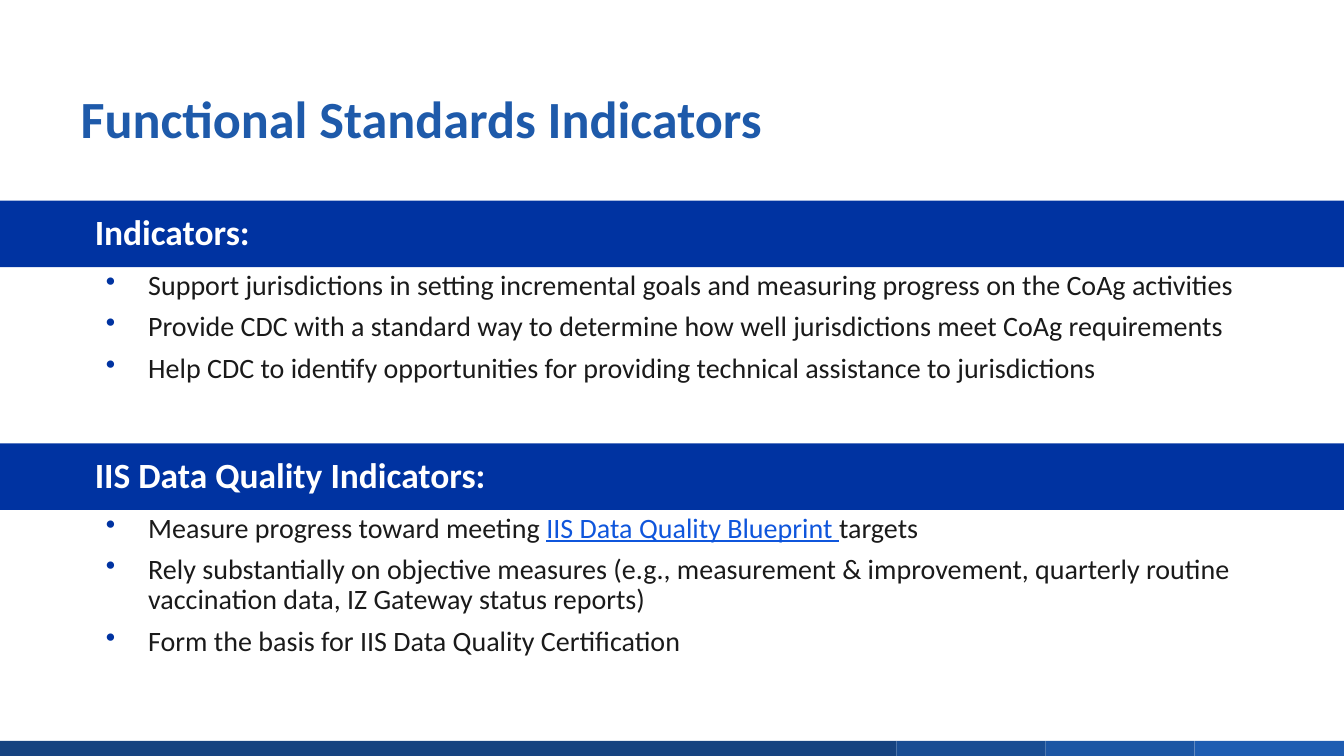
from dataclasses import dataclass

from lxml.etree import SubElement
from pptx import Presentation
from pptx.dml.color import RGBColor
from pptx.enum.shapes import MSO_SHAPE as SHAPE
from pptx.enum.text import MSO_ANCHOR as ANCHOR
from pptx.oxml.ns import qn
from pptx.util import Inches, Pt


@dataclass(frozen=True)
class Theme:
    font: str = "Calibri"
    title: str = "1E5AAA"
    band: str = "0033A1"
    band_text: str = "FFFFFF"
    body: str = "1A1A1A"
    link: str = "0F56DC"
    footer: tuple = ("164380", "194D93", "1C56A4", "1E5DB2")
    title_size: float = 37.3
    band_size: float = 25.3
    body_size: float = 20


THEME = Theme()
WIDTH, HEIGHT = 13.33, 7.5
BAND_HEIGHT = 0.66
LINK = "IIS Data Quality Blueprint "

# Band top, list height, heading, bullets (each a list of runs)
SECTIONS = [
    (1.99, 1.15, "Indicators:", [
        ["Support jurisdictions in setting incremental goals and measuring "
         "progress on the CoAg activities"],
        ["Provide CDC with a standard way to determine how well jurisdictions "
         "meet CoAg requirements"],
        ["Help CDC to identify opportunities for providing technical "
         "assistance to jurisdictions"],
    ]),
    (4.4, 1.43, "IIS Data Quality Indicators:", [
        ["Measure progress toward meeting ", LINK, "targets"],
        ["Rely substantially on objective measures (e.g., measurement & "
         "improvement, quarterly routine vaccination data, IZ Gateway status "
         "reports)"],
        ["Form the basis for IIS Data Quality Certification"],
    ]),
]


def add_run(p, text, size=THEME.body_size, color=THEME.body, bold=False,
            underline=False):
    r = p.add_run()
    r.text = text
    r.font.name = THEME.font
    r.font.size = Pt(size)
    r.font.bold = bold
    r.font.underline = underline
    r.font.color.rgb = RGBColor.from_string(color)


def set_frame(tf, left, top, right, bottom, anchor=ANCHOR.TOP):
    """Set wrapping, anchor and insets in inches."""
    tf.word_wrap = True
    tf.vertical_anchor = anchor
    tf.margin_left, tf.margin_top = Inches(left), Inches(top)
    tf.margin_right, tf.margin_bottom = Inches(right), Inches(bottom)


def set_bullet(p, indent, color):
    pPr = p._p.get_or_add_pPr()
    pPr.set("marL", str(Inches(indent)))
    pPr.set("indent", str(-Inches(indent)))
    SubElement(SubElement(pPr, qn("a:buClr")), qn("a:srgbClr"), val=color)
    SubElement(pPr, qn("a:buChar"), char="•")


def add_box(s, left, top, width, height):
    return s.shapes.add_textbox(Inches(left), Inches(top), Inches(width),
                                Inches(height)).text_frame


def add_bar(s, left, top, width, height, color):
    sp = s.shapes.add_shape(SHAPE.RECTANGLE, Inches(left), Inches(top),
                            Inches(width), Inches(height))
    sp.shadow.inherit = False
    sp.fill.solid()
    sp.fill.fore_color.rgb = RGBColor.from_string(color)
    sp.line.fill.background()
    return sp.text_frame


def add_footer(s):
    step = 1.48
    first = WIDTH - 3 * step
    for i, color in enumerate(THEME.footer):
        left, width = (first + (i - 1) * step, step) if i else (0, first)
        add_bar(s, left, 7.35, width, 0.15, color)


def add_title(s, text):
    tf = add_box(s, 0.67, 0.3, 12, 1.25)
    set_frame(tf, 0.13, 0.07, 0.13, 0.07, ANCHOR.BOTTOM)
    p = tf.paragraphs[0]
    p.line_spacing = Pt(40)
    add_run(p, text, size=THEME.title_size, color=THEME.title, bold=True)


def add_band(s, top, text):
    tf = add_bar(s, 0, top, WIDTH, BAND_HEIGHT, THEME.band)
    set_frame(tf, 0.94, 0.14, 0.14, 0.14, ANCHOR.MIDDLE)
    p = tf.paragraphs[0]
    p.alignment = 1
    p.line_spacing = 0.9
    add_run(p, text, size=THEME.band_size, color=THEME.band_text, bold=True)


def add_bullets(s, top, height, items):
    tf = add_box(s, 0.67, top, 12, height)
    set_frame(tf, 0.38, 0.04, 0.2, 0.04)
    for i, runs in enumerate(items):
        p = tf.add_paragraph() if i else tf.paragraphs[0]
        p.line_spacing = 0.9
        p.space_after = Pt(8)
        set_bullet(p, 0.42, THEME.band)
        for text in runs:
            is_link = text == LINK
            add_run(p, text, color=THEME.link if is_link else THEME.body,
                    underline=is_link)


def main():
    prs = Presentation()
    prs.slide_width, prs.slide_height = Inches(WIDTH), Inches(HEIGHT)
    s = prs.slides.add_slide(prs.slide_layouts[6])
    add_footer(s)
    for top, list_height, heading, items in SECTIONS:
        add_band(s, top, heading)
        add_bullets(s, top + BAND_HEIGHT, list_height, items)
    add_title(s, "Functional Standards Indicators")
    prs.save("out.pptx")


if __name__ == "__main__":
    main()
